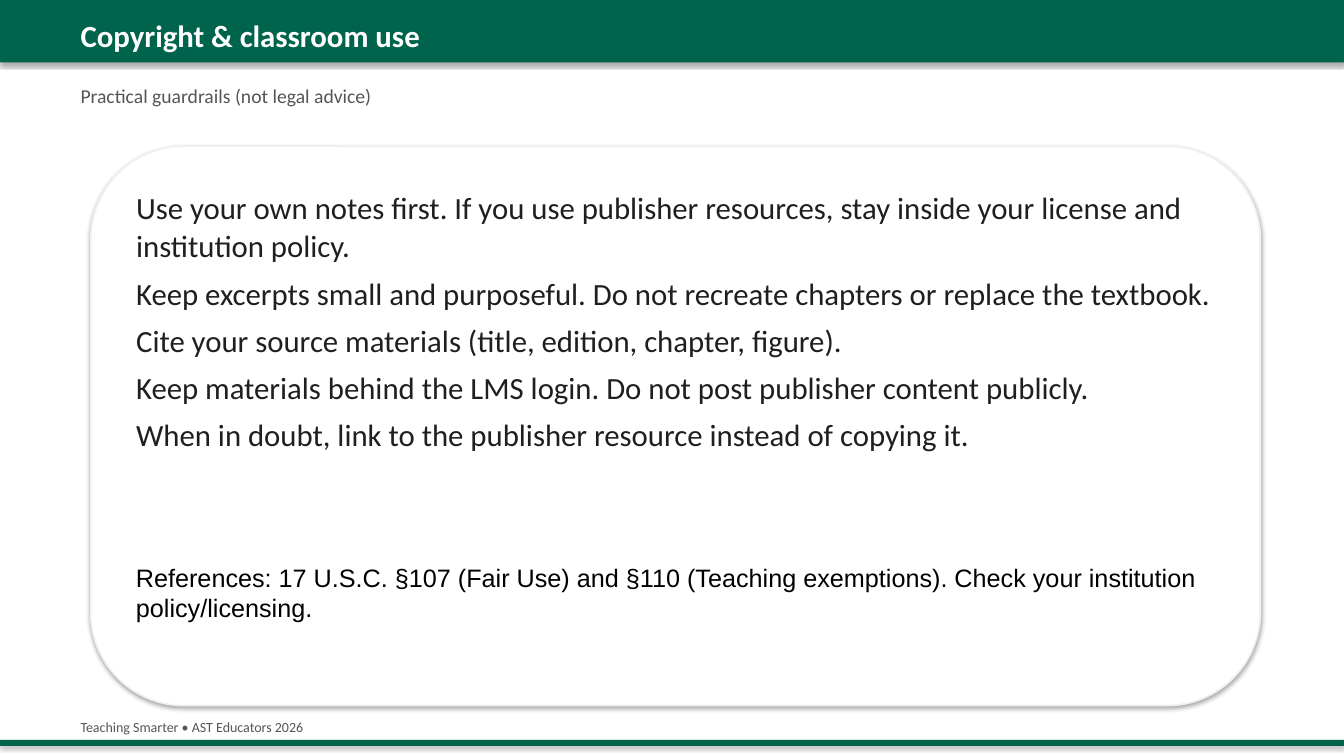
from lxml import etree
from pptx import Presentation
from pptx.dml.color import RGBColor
from pptx.enum import shapes, text
from pptx.oxml import ns
from pptx.util import Inches, Pt

COLORS = {
    "green": "00634C",
    "white": "FFFFFF",
    "outline": "EEF0F2",
    "muted": "555555",
    "body": "1F1F1F",
    "black": "000000",
}
GUARDRAILS = [
    "Use your own notes first. If you use publisher resources, stay inside your license and institution policy.",
    "Keep excerpts small and purposeful. Do not recreate chapters or replace the textbook.",
    "Cite your source materials (title, edition, chapter, figure).",
    "Keep materials behind the LMS login. Do not post publisher content publicly.",
    "When in doubt, link to the publisher resource instead of copying it.",
]
REFERENCES = (
    "References: 17 U.S.C. §107 (Fair Use) and §110 (Teaching exemptions). "
    "Check your institution policy/licensing."
)


def color(name):
    return RGBColor.from_string(COLORS[name])


def add_child(parent, tag, **attributes):
    child = etree.SubElement(parent, ns.qn(tag))
    for name, value in attributes.items():
        child.set(name, str(value))
    return child


def add_shadow(shape):
    shape.shadow.inherit = False
    effects = shape.element.spPr.find(ns.qn("a:effectLst"))
    shadow = add_child(effects, "a:outerShdw", blurRad=Pt(3.1), dist=Pt(1.8),
                       dir=90 * 60000, algn="ctr", rotWithShape=0)
    shade = add_child(shadow, "a:srgbClr", val=COLORS["black"])
    add_child(shade, "a:alpha", val=35000)


def add_panel(slide, kind, box, fill, outline=None):
    shape = slide.shapes.add_shape(kind, *map(Inches, box))
    shape.fill.solid()
    shape.fill.fore_color.rgb = color(fill)
    if outline:
        shape.line.color.rgb = color(outline)
        shape.line.width = Pt(1.25)
    else:
        shape.line.fill.background()
    add_shadow(shape)


def place(shape, box):
    shape.left, shape.top, shape.width, shape.height = map(Inches, box)
    shape.element.getparent().append(shape.element)


def write(shape, lines, size, ink, font="Calibri", bold=False, wrap=True):
    frame = shape.text_frame
    frame.text = "\n".join(lines)
    frame.word_wrap = wrap
    frame.auto_size = text.MSO_AUTO_SIZE.NONE
    frame.vertical_anchor = text.MSO_ANCHOR.TOP
    for paragraph in frame.paragraphs:
        paragraph.alignment = text.PP_ALIGN.LEFT
        for run in paragraph.runs:
            run.font.name = font
            run.font.size = Pt(size)
            run.font.bold = bold
            run.font.color.rgb = color(ink)


def add_label(slide, box, words, size, ink, **options):
    label = slide.shapes.add_textbox(*map(Inches, box))
    write(label, [words], size, ink, **options)


def fill_guardrails(shape):
    place(shape, (1.25, 1.8, 10.9, 4.2))
    write(shape, GUARDRAILS, 22, "body")
    for paragraph in shape.text_frame.paragraphs:
        paragraph.line_spacing = 1.05
        paragraph.space_before = Pt(0)
        paragraph.space_after = Pt(6)
        properties = paragraph._p.get_or_add_pPr()
        properties.set("marL", "0")
        properties.set("indent", "0")
        add_child(properties, "a:buNone")


def main():
    presentation = Presentation()
    presentation.slide_width = Inches(13.33)
    presentation.slide_height = Inches(7.5)
    slide = presentation.slides.add_slide(presentation.slide_layouts[1])
    title, body = slide.placeholders
    rectangle = shapes.MSO_SHAPE.RECTANGLE

    add_panel(slide, rectangle, (0, 0, 13.33, 0.62), "green")
    place(title, (0.7, 0.12, 4, 0.47))
    write(title, ["Copyright & classroom use"], 22, "white", bold=True)
    add_label(slide, (0.7, 0.78, 3.09, 0.33),
              "Practical guardrails (not legal advice)", 14, "muted", wrap=False)

    add_panel(slide, rectangle, (0, 7.34, 13.33, 0.06), "green")
    add_label(slide, (0.7, 7.08, 2.41, 0.27),
              "Teaching Smarter • AST Educators 2026", 10, "muted", wrap=False)

    add_panel(slide, shapes.MSO_SHAPE.ROUNDED_RECTANGLE,
              (0.9, 1.45, 11.6, 5.55), "white", "outline")
    fill_guardrails(body)
    add_label(slide, (1.25, 5.53, 10.9, 0.33), REFERENCES, 18, "black", font="Arial")
    presentation.save("out.pptx")


if __name__ == "__main__":
    main()
